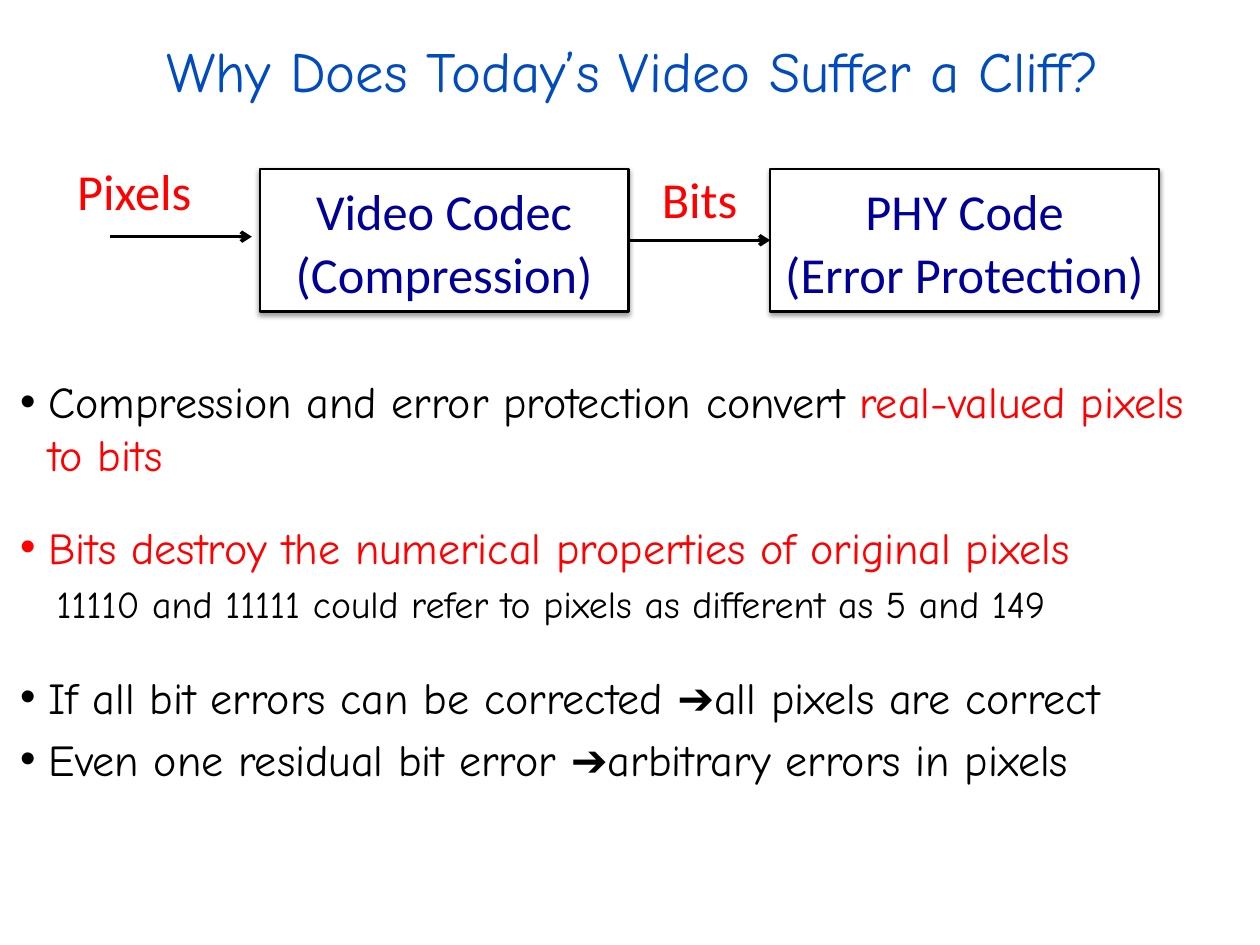
from dataclasses import dataclass

from lxml import etree
from pptx import Presentation
from pptx.dml.color import RGBColor as RGB
from pptx.enum.shapes import MSO_CONNECTOR as LINE, MSO_SHAPE as SHAPE
from pptx.enum.text import MSO_ANCHOR as ANCHOR, MSO_AUTO_SIZE as FIT, PP_ALIGN as ALIGN
from pptx.oxml import parse_xml
from pptx.oxml.ns import nsdecls, qn
from pptx.util import Cm, Pt


@dataclass(frozen=True)
class Theme:
    white = RGB(0xFF, 0xFF, 0xFF)
    black = RGB(0, 0, 0)
    red = RGB(0xFF, 0, 0)
    navy = RGB(0, 0, 0x99)
    blue = RGB(0, 0x4C, 0xBF)
    hand = "Comic Neue"
    sans = "Calibri"
    title = Pt(36)
    diagram = Pt(32)
    body = Pt(28)
    detail = Pt(24)


T = Theme()


def add_run(p, text, font, size, color):
    r = p.add_run()
    r.text = text
    r.font.name, r.font.size, r.font.color.rgb = font, size, color


def add_arrow(x1, x2, y):
    c = s.shapes.add_connector(LINE.STRAIGHT, Cm(x1), Cm(y), Cm(x2), Cm(y))
    c.line.color.rgb, c.line.width = T.black, Pt(2.25)
    etree.SubElement(c.line._get_or_add_ln(), qn("a:tailEnd"), type="arrow")
    etree.SubElement(c._element.spPr, qn("a:effectLst"))
    return c


prs = Presentation()
prs.slide_width, prs.slide_height = Cm(28.22), Cm(21.16)
s = prs.slides.add_slide(prs.slide_layouts[5])

# Title
title = s.shapes.title
title.left, title.top, title.width, title.height = Cm(-0.3), Cm(-0.2), Cm(28.93), Cm(3.53)
tf = title.text_frame
tf.auto_size, tf.vertical_anchor = FIT.NONE, ANCHOR.MIDDLE
tf.paragraphs[0].alignment = ALIGN.CENTER
add_run(tf.paragraphs[0], "Why Does Today’s Video Suffer a Cliff?", T.hand, T.title, T.blue)

# Processing stages
SHADOW = (f'<a:effectLst {nsdecls("a")}><a:outerShdw blurRad="39370" dist="20320" dir="5400000" '
          'rotWithShape="0"><a:srgbClr val="000000"><a:alpha val="38000"/></a:srgbClr>'
          '</a:outerShdw></a:effectLst>')
stages = []
for left, width, lines in [
    (5.82, 8.26, ["Video Codec", "(Compression)"]),
    (17.25, 8.71, ["PHY Code", "(Error Protection)"]),
]:
    sp = s.shapes.add_shape(SHAPE.RECTANGLE, Cm(left), Cm(3.78), Cm(width), Cm(3.2))
    sp.fill.solid()
    sp.fill.fore_color.rgb = T.white
    sp.line.color.rgb, sp.line.width = T.black, Pt(1.5)
    sp._element.spPr.append(parse_xml(SHADOW))
    tf = sp.text_frame
    tf.word_wrap, tf.vertical_anchor = True, ANCHOR.MIDDLE
    tf.margin_left = tf.margin_right = Cm(0.23)
    tf.margin_top = tf.margin_bottom = Cm(0.1)
    for i, line in enumerate(lines):
        p = tf.add_paragraph() if i else tf.paragraphs[0]
        p.alignment, p.line_spacing = ALIGN.CENTER, Pt(40)
        add_run(p, line, T.sans, T.diagram, T.navy)
    stages.append(sp)

# Signal arrows and their labels
add_arrow(2.46, 5.64, 5.3)
link = add_arrow(14.08, 17.25, 5.38)
link.begin_connect(stages[0], 3)
link.end_connect(stages[1], 1)

for left, top, label in [(1.42, 3.45, "Pixels"), (14.08, 3.63, "Bits")]:
    tf = s.shapes.add_textbox(Cm(left), Cm(top), Cm(3.18), Cm(1.62)).text_frame
    tf.word_wrap = True
    tf.paragraphs[0].alignment = ALIGN.CENTER
    add_run(tf.paragraphs[0], label, T.sans, T.diagram, T.red)

# Bullets: level, space before, size, runs
points = [
    (0, 5.6, T.body, [("Compression and error protection convert ", T.black),
                      ("real-valued pixels to bits", T.red)]),
    (0, 25.2, T.body, [("Bits destroy the numerical properties of original pixels", T.red)]),
    (1, 4.8, T.detail, [("11110 and 11111 could refer to pixels as different as 5 and 149", T.black)]),
    (0, 28, T.body, [("If all bit errors can be corrected ➔all pixels are correct", T.black)]),
    (0, 5.6, T.body, [("Even one residual bit error ➔arbitrary errors in pixels", T.black)]),
]
tf = s.shapes.add_textbox(Cm(0.2), Cm(8.26), Cm(27.66), Cm(10.36)).text_frame
tf.word_wrap = True
for i, (level, before, size, runs) in enumerate(points):
    p = tf.add_paragraph() if i else tf.paragraphs[0]
    p.level, p.space_before = level, Pt(before)
    margin, indent = (Cm(1.73), Cm(-0.91)) if level else (Cm(0.64), Cm(-0.64))
    pPr = p._p.get_or_add_pPr()
    pPr.set("marL", str(margin))
    pPr.set("indent", str(indent))
    if level:
        etree.SubElement(pPr, qn("a:buNone"))
        pPr.set("marL", str(margin + indent))
        pPr.set("indent", "0")
    else:
        etree.SubElement(pPr, qn("a:buFont"), typeface="Arial")
        etree.SubElement(pPr, qn("a:buChar"), char="•")
    for text, color in runs:
        add_run(p, text, T.hand, size, color)

prs.save("out.pptx")
